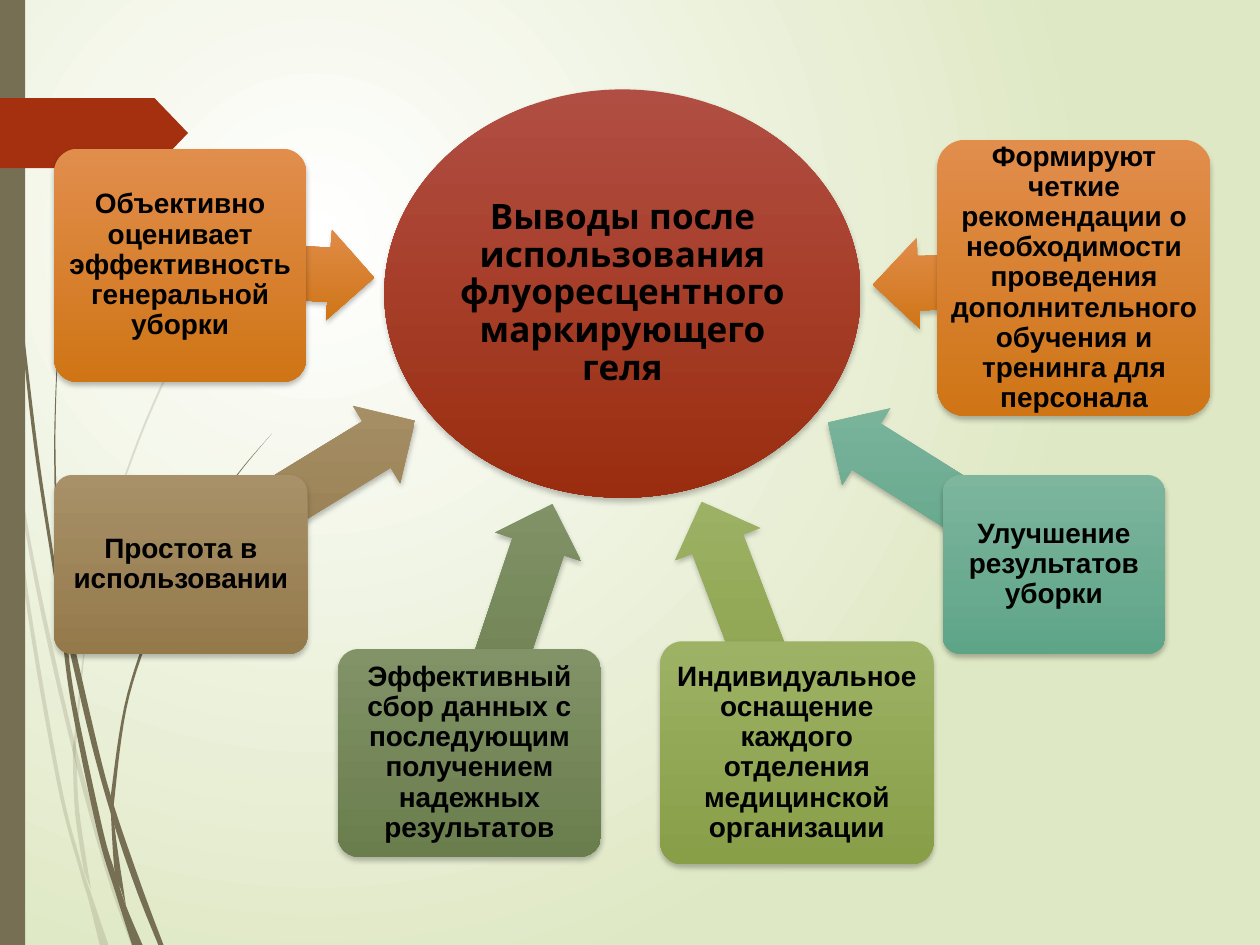
import math

from lxml import etree
from pptx import Presentation
from pptx.dml import color
from pptx.enum import shapes, text
from pptx.oxml import ns
from pptx.util import Pt

COLORS = {
    "paper": ("FFFFFF", "DFE8C4"),
    "stem": "766F54",
    "tag": "A53010",
    "ink": "000000",
    "red": ("B14E43", "9A2D0F"),
    "orange": ("E18D4C", "CF7516"),
    "brown": ("A89068", "947A4B"),
    "moss": ("819367", "6A7D4D"),
    "lime": ("9DB265", "889E47"),
    "teal": ("7DB59D", "5EA588"),
}
SHAPE = shapes.MSO_SHAPE
HUB_BOX = (219.6, 51.1, 272.2, 233.3)
HUB_TEXT = "Выводы после использования флуоресцентного маркирующего геля"
ARROW_HEIGHT = 51.8
FINDINGS = [
    ("Объективно оценивает эффективность генеральной уборки",
     "orange", (31, 85, 144, 133.2), 111),
    ("Простота в использовании",
     "brown", (31, 271.4, 144.7, 102.2), 157),
    ("Эффективный сбор данных с последующим получением надежных результатов",
     "moss", (193, 370.8, 150.5, 118.8), 150),
    ("Индивидуальное оснащение каждого отделения медицинской организации",
     "lime", (377.3, 366.5, 156.2, 127.4), 153.5),
    ("Улучшение результатов уборки",
     "teal", (538.6, 271.4, 127.4, 102.2), 152.5),
    ("Формируют четкие рекомендации о необходимости проведения "
     "дополнительного обучения и тренинга для персонала",
     "orange", (535.7, 79.9, 156.2, 157.7), 115),
]
PALE_STRANDS = [
    ([(7, 248), (18, 312), (31, 374), (44, 429), (63.5, 498), (78, 540)],
     [(75, 540), (61, 500), (44, 439), (29, 376), (18, 323), (9, 271)]),
    ([(6, 252), (14, 338), (32.5, 447), (46, 499), (50.5, 514), (57, 540)],
     [(62, 540), (52.5, 512), (46, 492), (34.5, 446), (16, 338), (9, 271)]),
    ([(156, 110), (134.5, 142.5), (114.5, 176.5), (80, 251), (54.5, 332.5),
      (44, 420.5), (44, 439), (45.5, 465), (52, 508)],
     [(48, 498), (43, 465), (41.7, 431), (42.5, 420.5), (54, 332),
      (79, 250.5), (113.8, 175.5), (134, 142), (156, 110)]),
]
DARK_STRANDS = [
    ([(36, 340), (55.5, 425), (65.5, 461.5), (81.5, 508), (93.5, 540)],
     [(90.5, 540), (78.5, 510), (65.5, 472), (52.5, 426), (38, 364)]),
    ([(10, 168), (19.5, 255.5), (33, 343.5), (40.5, 401), (55.5, 474.5),
      (66, 510), (75.5, 540)],
     [(81.5, 540), (72, 517.5), (65.5, 497.5), (58.5, 473), (43, 400),
      (38, 364), (32.5, 329), (21.5, 255.5), (11, 167)]),
    ([(41.7, 101.5), (37.5, 139), (34.5, 176.5), (31.7, 251), (34.5, 326),
      (38, 364)],
     [(34, 343.5), (32.5, 323), (31, 251), (34, 176.5), (36.7, 139),
      (41.7, 101.5)]),
    ([(155.5, 247.7), (137.5, 269.3), (121.7, 292.3), (94.3, 342.7),
      (74, 397.5), (65.5, 455.8), (65.5, 472), (72, 517.5)],
     [(69, 508), (65.5, 497.5), (63.4, 464.4), (63.4, 454.3), (72.7, 396.7),
      (93, 341.3), (121, 291.6), (137.5, 268.6), (155.5, 247.7)]),
]


def apply_format(target, values):
    for key, value in values.items():
        setattr(target, key, value)


def paint_solid(part, name):
    part.shadow.inherit = False
    part.line.fill.background()
    part.fill.solid()
    part.fill.fore_color.rgb = color.RGBColor.from_string(COLORS[name])


def set_gradient(fill, name):
    fill.gradient()
    for stop, position, value in zip(fill.gradient_stops, (0, 1), COLORS[name]):
        apply_format(stop, {"position": position})
        stop.color.rgb = color.RGBColor.from_string(value)


def add_glossy(slide, kind, box, name):
    part = slide.shapes.add_shape(kind, *map(Pt, box))
    part.line.fill.background()
    set_gradient(part.fill, name)
    part.fill.gradient_angle = 270
    properties = part._element.spPr
    properties.find(ns.qn("a:gradFill")).set("rotWithShape", "0")
    part.shadow.inherit = False
    shadow = etree.SubElement(
        properties.find(ns.qn("a:effectLst")), ns.qn("a:outerShdw"),
        blurRad=str(Pt(3)), dist=str(Pt(2)), dir="5400000", rotWithShape="0")
    ink = etree.SubElement(shadow, ns.qn("a:srgbClr"), val=COLORS["ink"])
    etree.SubElement(ink, ns.qn("a:alpha"), val="25000")
    return part


def write_label(part, words, font, size, inset):
    frame = part.text_frame
    margins = {f"margin_{side}": Pt(inset)
               for side in ("left", "top", "right", "bottom")}
    apply_format(frame, {"word_wrap": True,
                         "vertical_anchor": text.MSO_ANCHOR.MIDDLE, **margins})
    paragraph = frame.paragraphs[0]
    apply_format(paragraph, {"alignment": text.PP_ALIGN.CENTER, "line_spacing": 0.9})
    run = paragraph.add_run()
    run.text = words
    apply_format(run.font, {"name": font, "size": Pt(size), "bold": True})
    run.font.color.rgb = color.RGBColor.from_string(COLORS["ink"])


def smooth_edge(points, steps=8):
    padded = [points[0], *points, points[-1]]
    curve = []
    for a, b, c, d in zip(padded, padded[1:], padded[2:], padded[3:]):
        for step in range(steps):
            t = step / steps
            curve.append(tuple(
                q + t * (r - p) / 2
                + t**2 * (2 * p - 5 * q + 4 * r - s) / 2
                + t**3 * (3 * q - p - 3 * r + s) / 2
                for p, q, r, s in zip(a, b, c, d)))
    return curve + [points[-1]]


def add_grass(slide, box, strands, alpha=None):
    left, top = box[:2]
    for edges in strands:
        outline = [(Pt(left + x), Pt(top + y))
                   for edge in edges for x, y in smooth_edge(edge)]
        builder = slide.shapes.build_freeform(*outline[0])
        builder.add_line_segments(outline[1:], close=True)
        blade = builder.convert_to_shape()
        paint_solid(blade, "stem")
        if alpha:
            tint = blade._element.spPr.find(ns.qn("a:solidFill"))[0]
            etree.SubElement(tint, ns.qn("a:alpha"), val=str(alpha * 1000))


def add_backdrop(slide, box):
    left, top, width, height = box
    set_gradient(slide.background.fill, "paper")
    gradient = slide.background._cSld.find(".//" + ns.qn("a:gradFill"))
    gradient.remove(gradient.find(ns.qn("a:lin")))
    glow = etree.SubElement(gradient, ns.qn("a:path"), path="circle")
    etree.SubElement(glow, ns.qn("a:fillToRect"),
                     l="50000", t="50000", r="100000", b="100000")
    add_grass(slide, box, PALE_STRANDS, alpha=20)
    add_grass(slide, box, DARK_STRANDS)
    edge_bar = slide.shapes.add_shape(
        SHAPE.RECTANGLE, Pt(left), Pt(top), Pt(14.4), Pt(height))
    paint_solid(edge_bar, "stem")
    tag = slide.shapes.add_shape(
        SHAPE.PENTAGON, Pt(left), Pt(top + 56), Pt(107.5), Pt(40))
    tag.adjustments[0] = 0.48
    paint_solid(tag, "tag")


def center_of(box):
    left, top, width, height = box
    return left + width / 2, top + height / 2


def add_hub(slide, box):
    hub = add_glossy(slide, SHAPE.OVAL, box, "red")
    write_label(hub, HUB_TEXT, "League Spartan", 20, 0.7)


def add_finding(slide, box, words, name, reach):
    x, y = center_of(box)
    hub_x, hub_y = center_of(HUB_BOX)
    angle = math.atan2(hub_y - y, hub_x - x)
    arrow_box = (x + reach / 2 * math.cos(angle) - reach / 2,
                 y + reach / 2 * math.sin(angle) - ARROW_HEIGHT / 2,
                 reach, ARROW_HEIGHT)
    arrow = add_glossy(slide, SHAPE.LEFT_ARROW, arrow_box, name)
    arrow.adjustments[0] = 0.6
    arrow.rotation = math.degrees(angle) + 180
    card = add_glossy(slide, SHAPE.ROUNDED_RECTANGLE, box, name)
    card.adjustments[0] = 0.1
    write_label(card, words, "Arial", 16, 2.2)


def main():
    deck = Presentation()
    apply_format(deck, {"slide_width": Pt(720), "slide_height": Pt(540)})
    slide = deck.slides.add_slide(deck.slide_layouts[6])
    add_backdrop(slide, (0, 0, 720, 540))
    add_hub(slide, HUB_BOX)
    for words, name, box, reach in FINDINGS:
        add_finding(slide, box, words, name, reach)
    deck.save("out.pptx")


if __name__ == "__main__":
    main()
